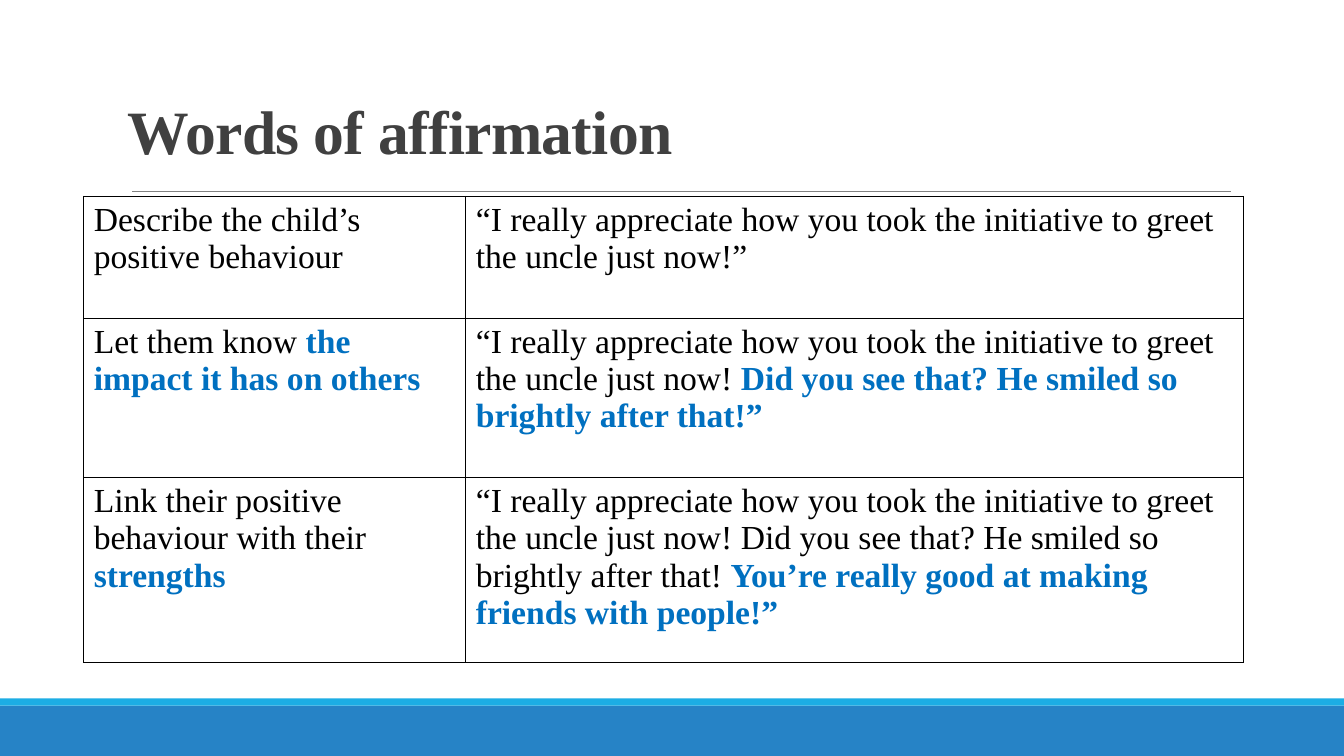
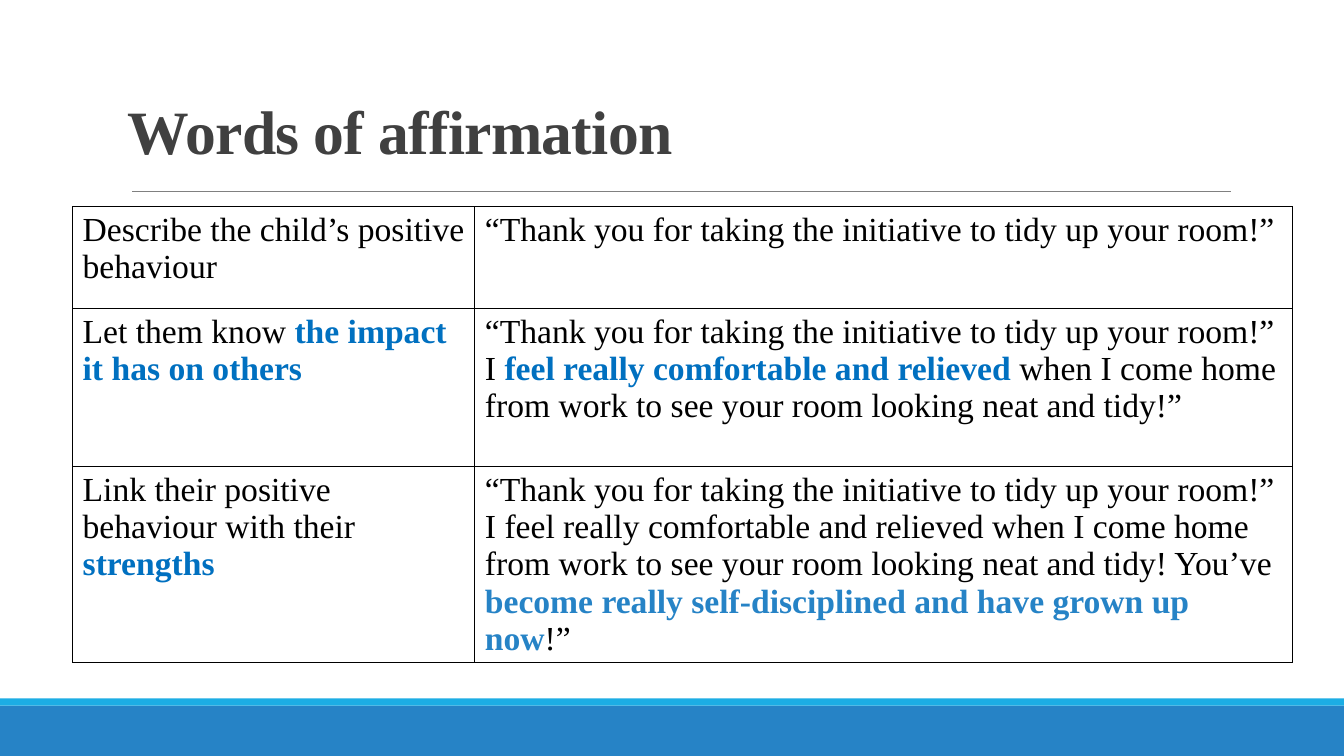
from dataclasses import dataclass
from typing import NamedTuple

import lxml.etree
import pptx
import pptx.dml.color
import pptx.enum.shapes
import pptx.enum.text
import pptx.oxml.ns
import pptx.util

RGBColor = pptx.dml.color.RGBColor
Inches = pptx.util.Inches
Pt = pptx.util.Pt
qn = pptx.oxml.ns.qn

SLIDE_WIDTH, SLIDE_HEIGHT = 13.33, 7.5
FONT = "Times New Roman"
BLACK = RGBColor(0x00, 0x00, 0x00)
TITLE_GREY = RGBColor(0x40, 0x40, 0x40)
RULE_GREY = RGBColor(0x80, 0x80, 0x80)
EMPHASIS_BLUE = RGBColor(0x00, 0x70, 0xC0)
BAND_BLUE = RGBColor(0x26, 0x83, 0xC6)
STRIPE_BLUE = RGBColor(0x1C, 0xAD, 0xE4)


class Phrase(NamedTuple):
    text: str
    color: RGBColor = BLACK
    bold: bool = False


def strong(text: str, color: RGBColor = EMPHASIS_BLUE) -> Phrase:
    return Phrase(text, color, True)


class Band(NamedTuple):
    top: float
    height: float
    color: RGBColor


@dataclass(frozen=True)
class Lesson:
    """One table of steps, each answered by an example sentence."""
    left: float
    top: float
    columns: tuple[float, float]
    rows: tuple[float, float, float]
    examples: tuple[tuple[Phrase, ...], ...]


FOOTER_BANDS = (Band(7, 0.5, BAND_BLUE), Band(6.93, 0.07, STRIPE_BLUE))

STEPS = (
    (Phrase("Describe the child’s positive behaviour"),),
    (Phrase("Let them know "), strong("the impact it has on others")),
    (Phrase("Link their positive behaviour with their "), strong("strengths")),
)

GREETING = "“I really appreciate how you took the initiative to greet the uncle just now!"
SMILE = "Did you see that? He smiled so brightly after that!"
TIDYING = "“Thank you for taking the initiative to tidy up your room!”"
RELIEF = "feel really comfortable and relieved "
HOMECOMING = "when I come home from work to see your room looking neat and tidy!"

LESSONS = (
    Lesson(0.83, 1.95, (3.79, 7.71), (1.21, 1.58, 1.83), (
        (Phrase(f"{GREETING}”"),),
        (Phrase(f"{GREETING} "), strong(f"{SMILE}”")),
        (Phrase(f"{GREETING} {SMILE} "),
         strong("You’re really good at making friends with people!”")),
    )),
    Lesson(0.72, 2.05, (3.99, 8.11), (1.01, 1.57, 1.94), (
        (Phrase(TIDYING),),
        (Phrase(f"{TIDYING} I "), strong(RELIEF), Phrase(f"{HOMECOMING}”")),
        (Phrase(f"{TIDYING} I {RELIEF}{HOMECOMING} You’ve "),
         strong("become really self-disciplined and have grown up now", BAND_BLUE),
         Phrase("!”")),
    )),
)


def write_phrases(paragraph, phrases: tuple[Phrase, ...], size: float) -> None:
    for phrase in phrases:
        run = paragraph.add_run()
        run.text = phrase.text
        run.font.name = FONT
        run.font.size = Pt(size)
        run.font.bold = phrase.bold
        run.font.color.rgb = phrase.color


def add_frame(slide) -> None:
    """Draw the footer bands and the rule below the title."""
    for band in FOOTER_BANDS:
        bar = slide.shapes.add_shape(
            pptx.enum.shapes.MSO_SHAPE.RECTANGLE,
            0, Inches(band.top), Inches(SLIDE_WIDTH), Inches(band.height))
        bar.shadow.inherit = False
        bar.fill.solid()
        bar.fill.fore_color.rgb = band.color
        bar.line.fill.background()
    rule = slide.shapes.add_connector(
        pptx.enum.shapes.MSO_CONNECTOR.STRAIGHT,
        Inches(1.31), Inches(1.9), Inches(12.21), Inches(1.9))
    rule.line.color.rgb = RULE_GREY
    rule.line.width = Pt(0.5)
    lxml.etree.SubElement(rule._element.spPr, qn("a:effectLst"))


def add_title(slide, title: str) -> None:
    heading = slide.shapes.add_textbox(
        Inches(1.17), Inches(0.12), Inches(11), Inches(1.59)).text_frame
    heading.word_wrap = True
    heading.vertical_anchor = pptx.enum.text.MSO_ANCHOR.BOTTOM
    paragraph = heading.paragraphs[0]
    paragraph.line_spacing = 0.85
    write_phrases(paragraph, (strong(title, TITLE_GREY),), 44)
    paragraph.runs[0].font._element.set("spc", "-50")


def add_borders(cell) -> None:
    properties = cell._tc.get_or_add_tcPr()
    for side in ("lnL", "lnR", "lnT", "lnB"):
        border = lxml.etree.SubElement(properties, qn(f"a:{side}"), w=str(Pt(1)))
        fill = lxml.etree.SubElement(border, qn("a:solidFill"))
        lxml.etree.SubElement(fill, qn("a:srgbClr"), val=str(BLACK))


def add_lesson_table(slide, lesson: Lesson) -> None:
    table = slide.shapes.add_table(
        len(lesson.rows), len(lesson.columns), Inches(lesson.left), Inches(lesson.top),
        Inches(sum(lesson.columns)), Inches(sum(lesson.rows))).table
    table.first_row = False
    table.horz_banding = False
    for column, width in zip(table.columns, lesson.columns):
        column.width = Inches(width)
    for row, height, contents in zip(
            table.rows, lesson.rows, zip(STEPS, lesson.examples)):
        row.height = Inches(height)
        for cell, phrases in zip(row.cells, contents):
            add_borders(cell)
            cell.fill.background()
            write_phrases(cell.text_frame.paragraphs[0], phrases, 24)


def main() -> None:
    deck = pptx.Presentation()
    deck.slide_width = Inches(SLIDE_WIDTH)
    deck.slide_height = Inches(SLIDE_HEIGHT)
    blank_layout = deck.slide_layouts[6]
    for lesson in LESSONS:
        slide = deck.slides.add_slide(blank_layout)
        add_frame(slide)
        add_lesson_table(slide, lesson)
        add_title(slide, "Words of affirmation")
    deck.save("out.pptx")


if __name__ == "__main__":
    main()
